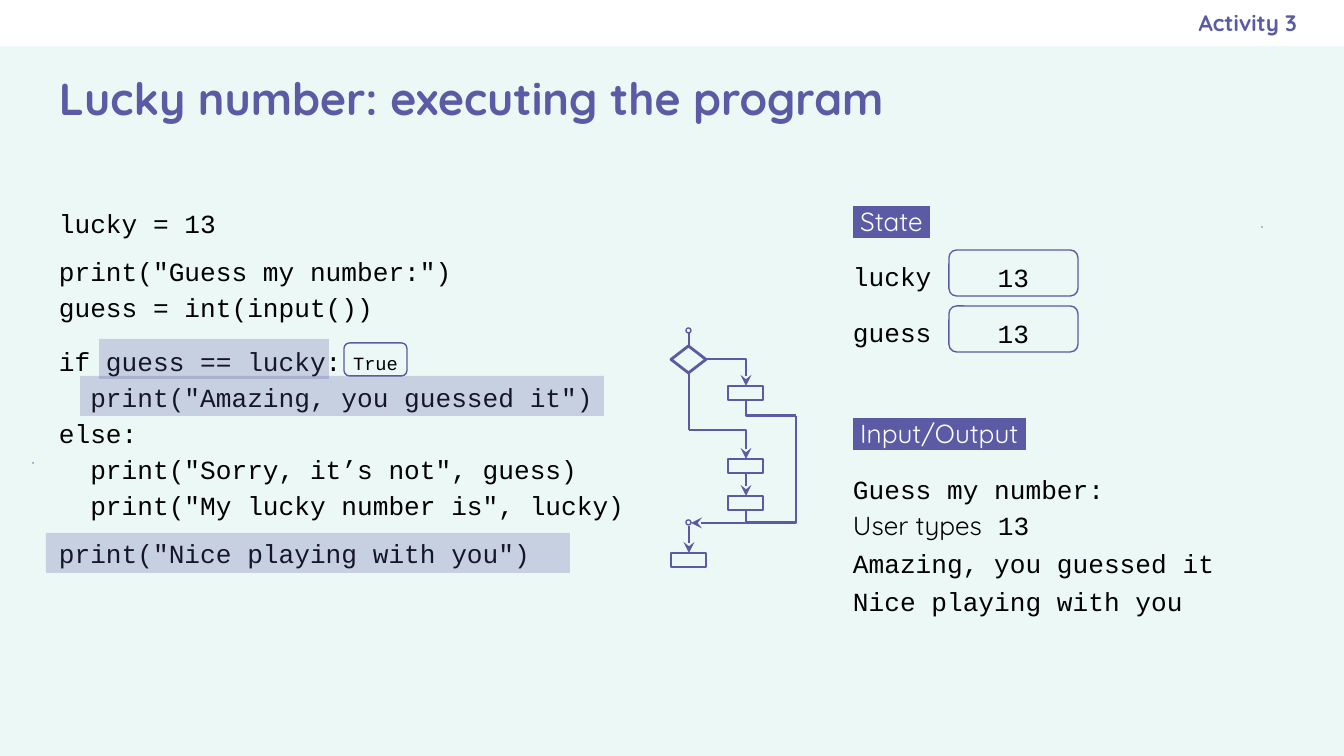
"""Build the slide that traces the lucky number program."""
import dataclasses
import typing

import lxml.etree
import pptx
import pptx.dml.color
import pptx.enum.shapes
import pptx.enum.text
import pptx.oxml.ns
import pptx.util

EMU_PER_PX = 914400 / 134.4
PURPLE = pptx.dml.color.RGBColor(0x5B, 0x5B, 0xA5)
BLACK = pptx.dml.color.RGBColor(0, 0, 0)
WHITE = pptx.dml.color.RGBColor(0xFF, 0xFF, 0xFF)
MINT = pptx.dml.color.RGBColor(0xEC, 0xF8, 0xF5)
CODE_FONT, PROSE_FONT = "Courier New", "Quicksand"
SHAPE = pptx.enum.shapes.MSO_SHAPE
ALIGN = pptx.enum.text.PP_ALIGN
ANCHOR = pptx.enum.text.MSO_ANCHOR
THIN, THICK = 0.75, 1.5


@dataclasses.dataclass(frozen=True)
class Box:
    left: int
    top: int
    width: int
    height: int


@dataclasses.dataclass(frozen=True)
class Run:
    text: str
    font: str = CODE_FONT
    size: int = 14
    color: pptx.dml.color.RGBColor = BLACK
    bold: bool = False
    highlight: typing.Optional[pptx.dml.color.RGBColor] = None


@dataclasses.dataclass(frozen=True)
class Line:
    runs: tuple[Run, ...]
    spacing: float = 1.15
    before: int = 0
    align: ALIGN = ALIGN.LEFT


@dataclasses.dataclass(frozen=True)
class Flow:
    """A connector that, when bent, runs horizontally first."""

    start: tuple[int, int]
    end: tuple[int, int]
    weight: float = THIN
    arrow: bool = False


@dataclasses.dataclass(frozen=True)
class Node:
    kind: SHAPE
    box: Box
    weight: float = THIN


def px(length: int) -> pptx.util.Emu:
    return pptx.util.Emu(round(length * EMU_PER_PX))


def place(box: Box) -> tuple[pptx.util.Emu, ...]:
    return tuple(px(length) for length in dataclasses.astuple(box))


def apply(target: typing.Any, values: dict[str, typing.Any]) -> None:
    for name, value in values.items():
        setattr(target, name, value)


def add_element(parent: typing.Any, tag: str, **attributes: str) -> typing.Any:
    return lxml.etree.SubElement(parent, pptx.oxml.ns.qn(tag), attributes)


def write(shape: typing.Any, lines: typing.Sequence[Line], anchor: ANCHOR = ANCHOR.TOP,
          margins: tuple[int, int, int, int] = (13, 13, 13, 13)) -> None:
    frame = shape.text_frame
    left, top, right, bottom = map(px, margins)
    apply(frame, {"auto_size": pptx.enum.text.MSO_AUTO_SIZE.NONE, "word_wrap": True,
                  "vertical_anchor": anchor, "margin_left": left, "margin_top": top,
                  "margin_right": right, "margin_bottom": bottom})
    for index, line in enumerate(lines):
        paragraph = frame.add_paragraph() if index else frame.paragraphs[0]
        apply(paragraph, {"alignment": line.align, "line_spacing": line.spacing,
                          "space_before": pptx.util.Pt(line.before)})
        for item in line.runs:
            run = paragraph.add_run()
            run.text = item.text
            run.font.color.rgb = item.color
            if item.highlight is not None:
                properties = run.font._element
                mark = add_element(properties, "a:highlight")
                add_element(mark, "a:srgbClr", val=str(item.highlight))
            apply(run.font, {"name": item.font, "bold": item.bold,
                             "size": pptx.util.Pt(item.size)})


def add_text(slide: typing.Any, box: Box, lines: typing.Sequence[Line],
             **options: typing.Any) -> None:
    write(slide.shapes.add_textbox(*place(box)), lines, **options)


def add_fill(slide: typing.Any, box: Box, color: pptx.dml.color.RGBColor,
             opacity: int = 100) -> None:
    shape = slide.shapes.add_shape(SHAPE.RECTANGLE, *place(box))
    shape.shadow.inherit = False
    shape.fill.solid()
    shape.fill.fore_color.rgb = color
    shape.line.fill.background()
    tint = shape.element.spPr.find(".//" + pptx.oxml.ns.qn("a:srgbClr"))
    add_element(tint, "a:alpha", val=str(opacity * 1000))


def add_node(slide: typing.Any, node: Node) -> typing.Any:
    shape = slide.shapes.add_shape(node.kind, *place(node.box))
    shape.shadow.inherit = False
    shape.fill.background()
    shape.line.color.rgb = PURPLE
    shape.line.width = pptx.util.Pt(node.weight)
    return shape


def add_value(slide: typing.Any, box: Box, run: Run, side: int) -> None:
    shape = add_node(slide, Node(SHAPE.ROUNDED_RECTANGLE, box))
    write(shape, [Line((run,), align=ALIGN.CENTER)], anchor=ANCHOR.MIDDLE,
          margins=(side, 3, side, 0))


def add_flow(slide: typing.Any, flow: Flow) -> None:
    connector = slide.shapes.add_connector(
        pptx.enum.shapes.MSO_CONNECTOR.STRAIGHT, *map(px, flow.start + flow.end))
    if flow.start[0] != flow.end[0] and flow.start[1] != flow.end[1]:
        connector.element.spPr.prstGeom.set("prst", "bentConnector2")
    connector.line.color.rgb = PURPLE
    connector.line.width = pptx.util.Pt(flow.weight)
    if flow.arrow:
        add_element(connector.line._get_or_add_ln(), "a:tailEnd", type="stealth")
    add_element(connector.element.spPr, "a:effectLst")


def main() -> None:
    presentation = pptx.Presentation()
    apply(presentation, {"slide_width": px(1344), "slide_height": px(756)})
    slide = presentation.slides.add_slide(presentation.slide_layouts[5])
    slide.background.fill.solid()
    slide.background.fill.fore_color.rgb = MINT

    add_fill(slide, Box(0, 0, 1344, 46), WHITE)
    title = slide.shapes.title
    apply(title, dict(zip(("left", "top", "width", "height"), place(Box(46, 46, 1253, 103)))))
    heading = Run("Lucky number: executing the program", PROSE_FONT, 24, PURPLE, True)
    write(title, [Line((heading,), 1.0)], anchor=ANCHOR.MIDDLE)
    activity = Run("Activity 3", PROSE_FONT, 12, PURPLE, True)
    add_text(slide, Box(773, 0, 524, 46), [Line((activity,), 1.0, align=ALIGN.RIGHT)],
             anchor=ANCHOR.MIDDLE, margins=(13, 13, 0, 13))

    program = [("lucky = 13", 0), ('print("Guess my number:")', 6),
               ("guess = int(input())", 0), ("if guess == lucky:", 10),
               ('  print("Amazing, you guessed it")', 0), ("else:", 0),
               ('  print("Sorry, it’s not", guess)', 0),
               ('  print("My lucky number is", lucky)', 0),
               ('print("Nice playing with you")', 6)]
    add_text(slide, Box(46, 190, 650, 394),
             [Line((Run(text),), before=before) for text, before in program])
    for box in (Box(99, 339, 230, 40), Box(80, 376, 524, 40), Box(46, 533, 524, 40)):
        add_fill(slide, box, PURPLE, 25)
    add_value(slide, Box(344, 343, 63, 33), Run("True", size=10), 0)

    main_x, branch_x, bypass_x = 689, 746, 796
    for flow in (Flow((main_x, 333), (main_x, 346)),
                 Flow((main_x, 373), (main_x, 430)),
                 Flow((main_x, 430), (branch_x, 459), arrow=True),
                 Flow((branch_x, 474), (branch_x, 496), arrow=True),
                 Flow((branch_x, 510), (branch_x, 523)),
                 Flow((706, 359), (branch_x, 386), THICK, True),
                 Flow((bypass_x, 416), (branch_x, 400), THICK),
                 Flow((branch_x, 523), (bypass_x, 416), THICK),
                 Flow((branch_x, 523), (691, 523), THICK, True),
                 Flow((main_x, 526), (main_x, 553), THICK, True)):
        add_flow(slide, flow)
    for node in (Node(SHAPE.OVAL, Box(686, 328, 5, 5)),
                 Node(SHAPE.FLOWCHART_DECISION, Box(671, 346, 35, 27), THICK),
                 Node(SHAPE.RECTANGLE, Box(728, 386, 35, 14), THICK),
                 Node(SHAPE.RECTANGLE, Box(728, 459, 35, 14)),
                 Node(SHAPE.RECTANGLE, Box(728, 496, 35, 14)),
                 Node(SHAPE.OVAL, Box(686, 520, 5, 5)),
                 Node(SHAPE.RECTANGLE, Box(671, 553, 35, 14), THICK),
                 Node(SHAPE.OVAL, Box(1262, 227, 0, 0)),
                 Node(SHAPE.OVAL, Box(33, 463, 0, 0))):
        add_node(slide, node)

    for label, top in ((" State ", 188), (" Input/Output ", 400)):
        run = Run(label, PROSE_FONT, color=WHITE, highlight=PURPLE)
        add_text(slide, Box(840, top, 239, 54), [Line((run,))])
    for index, name in enumerate(("lucky", "guess")):
        top = 243 + 56 * index
        add_text(slide, Box(840, top, 180, 54), [Line((Run(name),))])
        add_value(slide, Box(949, top + 7, 129, 46), Run("13"), 13)
    for top, runs in ((456, (Run("Guess my number:"),)),
                      (492, (Run("User types", PROSE_FONT), Run(" 13"))),
                      (530, (Run("Amazing, you guessed it"),)),
                      (568, (Run("Nice playing with you"),))):
        add_text(slide, Box(840, top, 458, 54), [Line(runs)])

    presentation.save("out.pptx")


if __name__ == "__main__":
    main()
